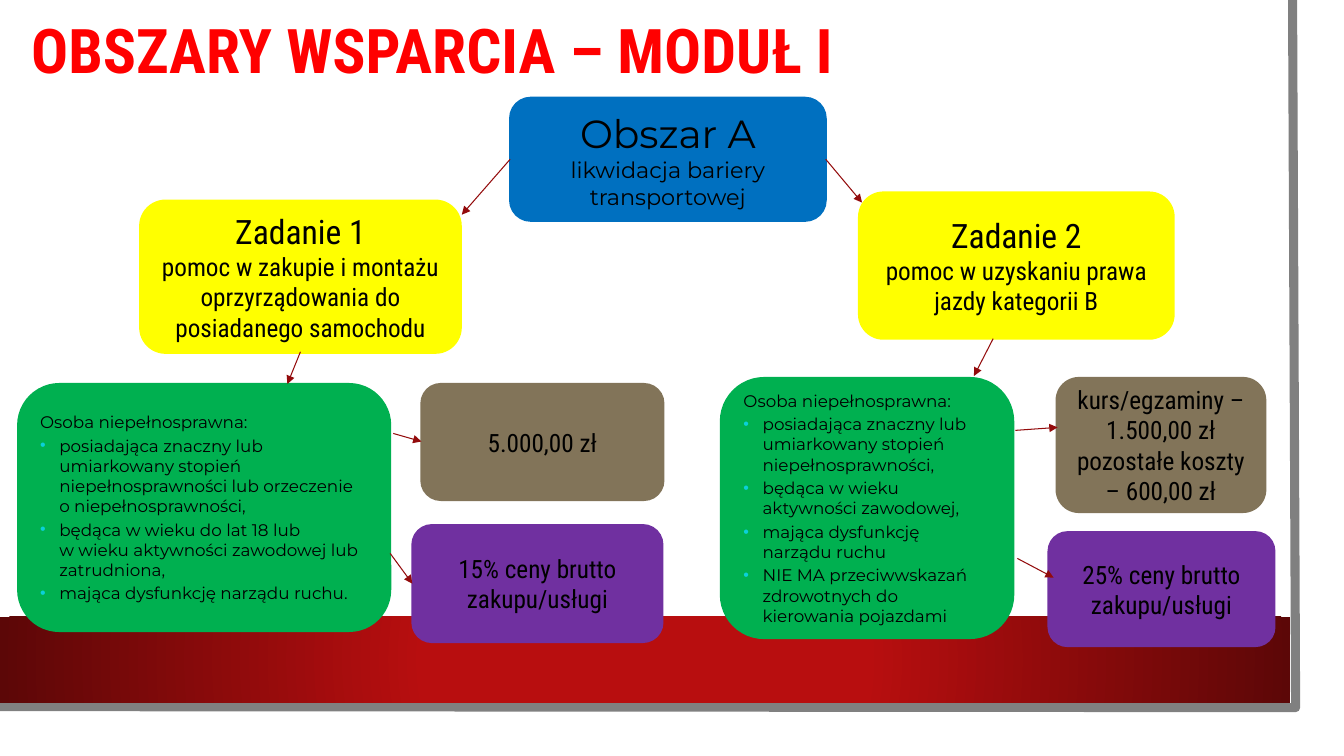
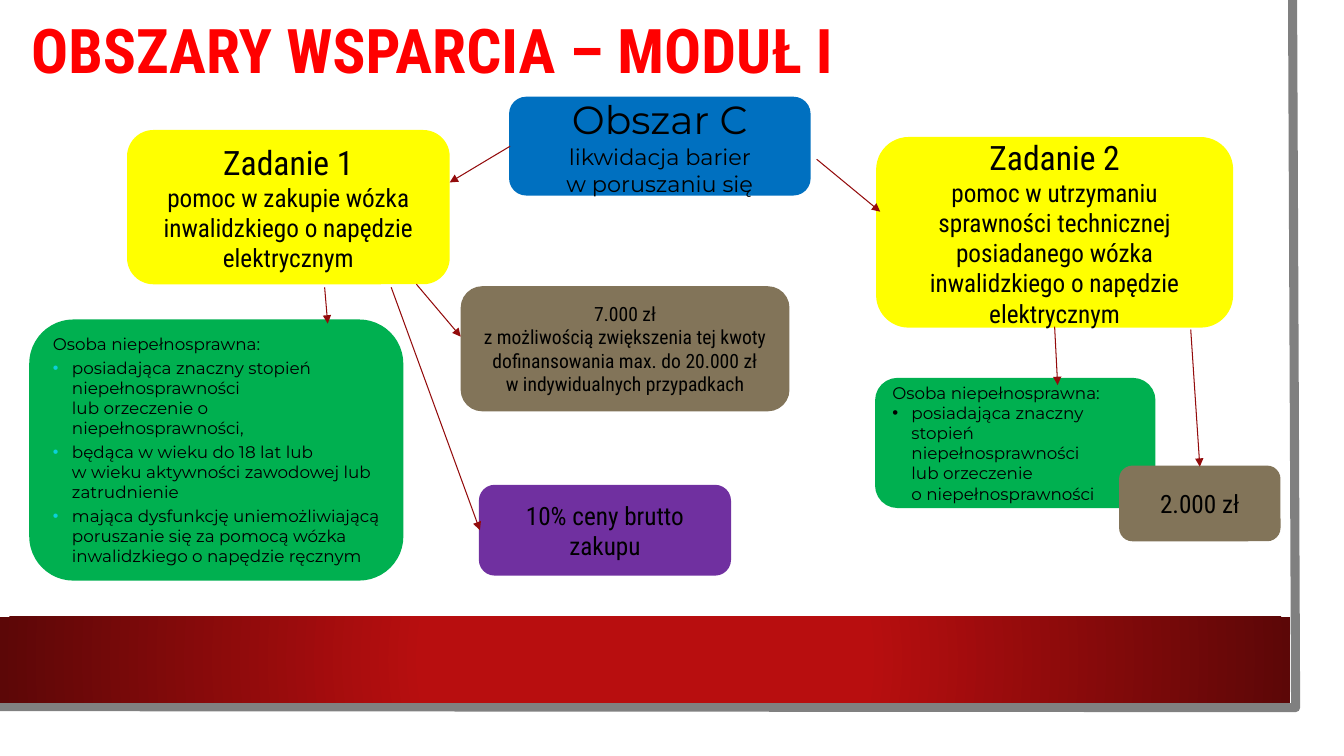
from dataclasses import dataclass, replace
from typing import Optional

from lxml import etree
from pptx import Presentation
from pptx.dml.color import RGBColor
from pptx.enum import shapes, text
from pptx.oxml import ns
from pptx.slide import Slide, SlideLayout
from pptx.util import Inches, Pt

BLACK = RGBColor(0x00, 0x00, 0x00)
RED = RGBColor(0xFF, 0x00, 0x00)
BLUE = RGBColor(0x00, 0x70, 0xC0)
YELLOW = RGBColor(0xFF, 0xFF, 0x00)
GREEN = RGBColor(0x00, 0xB0, 0x50)
BROWN = RGBColor(0x82, 0x74, 0x59)
PURPLE = RGBColor(0x70, 0x30, 0xA0)
CYAN = RGBColor(0x0B, 0xD0, 0xD9)
GREY = RGBColor(0x80, 0x80, 0x80)
BAND_CENTRE = RGBColor(0xB8, 0x0E, 0x0F)
BAND_EDGE = RGBColor(0x5C, 0x07, 0x07)
ARROW = RGBColor(0x93, 0x0B, 0x0C)

CONDENSED = "Roboto Condensed"
ROUND = "Montserrat"
TITLE = "OBSZARY WSPARCIA – MODUŁ I"
PERSON_HEADING = "Osoba niepełnosprawna:"


@dataclass(frozen=True)
class BoxStyle:
    fill: RGBColor
    font: str
    heading_size: float
    body_size: float
    bulleted: bool = False
    bullet_colour: Optional[RGBColor] = None
    space_before: float = 0


@dataclass(frozen=True)
class Box:
    style: BoxStyle
    left: float
    top: float
    width: float
    height: float
    lines: tuple[str, ...]


@dataclass(frozen=True)
class Arrow:
    x1: float
    y1: float
    x2: float
    y2: float


AREA = BoxStyle(BLUE, ROUND, 28, 16)
TASK = BoxStyle(YELLOW, CONDENSED, 24, 18)
PERSON = BoxStyle(GREEN, ROUND, 12, 12, True, CYAN, 2.4)
PLAIN_PERSON = replace(PERSON, bullet_colour=None, space_before=0)
AMOUNT = BoxStyle(BROWN, CONDENSED, 18, 18)
SMALL_AMOUNT = replace(AMOUNT, heading_size=14)
SHARE = replace(AMOUNT, fill=PURPLE)

AREA_A_BOXES = (
    Box(AREA, 5.06, 0.97, 3.13, 1.22, ("Obszar A", "likwidacja bariery transportowej")),
    Box(TASK, 1.39, 1.99, 3.18, 1.51, (
        "Zadanie 1",
        "pomoc w zakupie i montażu oprzyrządowania do posiadanego samochodu")),
    Box(TASK, 8.52, 1.91, 3.12, 1.45, (
        "Zadanie 2", "pomoc w uzyskaniu prawa jazdy kategorii B")),
    Box(PERSON, 0.18, 3.81, 3.69, 2.45, (
        PERSON_HEADING,
        "posiadająca znaczny lub umiarkowany stopień niepełnosprawności "
        "lub orzeczenie\vo niepełnosprawności,",
        "będąca w wieku do lat 18 lub\vw wieku aktywności zawodowej lub zatrudniona,",
        "mająca dysfunkcję narządu ruchu.")),
    Box(PERSON, 7.15, 3.75, 2.9, 2.58, (
        PERSON_HEADING,
        "posiadająca znaczny lub umiarkowany stopień niepełnosprawności,",
        "będąca w wieku aktywności zawodowej,",
        "mająca dysfunkcję narządu ruchu",
        "NIE MA przeciwwskazań zdrowotnych do kierowania pojazdami")),
    Box(AMOUNT, 4.18, 3.81, 2.4, 1.15, ("5.000,00 zł",)),
    Box(AMOUNT, 10.48, 3.75, 2.07, 1.33, (
        "kurs/egzaminy – 1.500,00 zł", "pozostałe koszty – 600,00 zł")),
    Box(SHARE, 4.09, 5.21, 2.48, 1.16, ("15% ceny brutto zakupu/usługi",)),
    Box(SHARE, 10.4, 5.28, 2.24, 1.13, ("25% ceny brutto zakupu/usługi",)),
)
AREA_A_ARROWS = (
    Arrow(5.06, 1.58, 4.58, 2.13),
    Arrow(8.19, 1.58, 8.55, 2.01),
    Arrow(2.98, 3.49, 2.85, 3.81),
    Arrow(3.9, 4.3, 4.18, 4.38),
    Arrow(3.87, 5.49, 4.09, 5.79),
    Arrow(9.85, 3.36, 9.66, 3.73),
    Arrow(10.07, 4.27, 10.49, 4.24),
    Arrow(10.09, 5.54, 10.45, 5.73),
)

AREA_C_BOXES = (
    Box(AREA, 5.06, 0.97, 2.97, 0.96, (
        "Obszar C", "likwidacja barier\vw poruszaniu się")),
    Box(TASK, 1.27, 1.3, 3.18, 1.51, (
        "Zadanie 1", "pomoc w zakupie wózka inwalidzkiego o napędzie elektrycznym")),
    Box(TASK, 8.7, 1.37, 3.52, 1.87, (
        "Zadanie 2",
        "pomoc w utrzymaniu sprawności technicznej posiadanego wózka "
        "inwalidzkiego o napędzie elektrycznym")),
    Box(PERSON, 0.3, 3.18, 3.69, 2.57, (
        PERSON_HEADING,
        "posiadająca znaczny stopień niepełnosprawności\v"
        "lub orzeczenie o niepełnosprawności,",
        "będąca w wieku do 18 lat lub\vw wieku aktywności zawodowej lub zatrudnienie",
        "mająca dysfunkcję uniemożliwiającą poruszanie się za pomocą wózka "
        "inwalidzkiego o napędzie ręcznym")),
    Box(SMALL_AMOUNT, 4.58, 2.85, 3.24, 1.22, (
        "7.000 zł\vz możliwością zwiększenia tej kwoty dofinansowania "
        "max. do 20.000 zł\vw indywidualnych przypadkach",)),
    Box(SHARE, 4.76, 4.82, 2.48, 0.88, ("10% ceny brutto zakupu",)),
    Box(PLAIN_PERSON, 8.69, 3.76, 2.76, 1.27, (
        PERSON_HEADING,
        "posiadająca znaczny stopień niepełnosprawności\v"
        "lub orzeczenie\vo niepełnosprawności")),
    Box(AMOUNT, 11.11, 4.63, 1.58, 0.73, ("2.000 zł",)),
)
AREA_C_ARROWS = (
    Arrow(5.06, 1.45, 4.46, 1.81),
    Arrow(8.1, 1.58, 8.73, 2.1),
    Arrow(3.22, 2.85, 3.25, 3.21),
    Arrow(10.46, 3.24, 10.49, 3.82),
    Arrow(11.81, 3.27, 11.9, 4.63),
    Arrow(4.13, 2.82, 4.57, 3.34),
    Arrow(3.88, 2.85, 4.76, 5.26),
)


def add_element(parent, tag: str, **attributes: str):
    return etree.SubElement(parent, ns.qn(tag), attributes)


def prepare_layout(layout: SlideLayout, slide: Slide) -> None:
    """Draw the frame and band on the slide, then move them behind the layout's title."""
    for holder in list(layout.placeholders):
        if holder.placeholder_format.type == shapes.PP_PLACEHOLDER.TITLE:
            holder.left, holder.top = Inches(0.21), 0
            holder.width, holder.height = Inches(11.37), Inches(1.07)
        else:
            layout.shapes.element.remove(holder.element)

    builder = slide.shapes.build_freeform(Inches(12.82), 0)
    corners = [(Inches(12.85), Inches(7.02)), (Inches(-0.03), Inches(7.01))]
    builder.add_line_segments(corners, close=False)
    frame = builder.convert_to_shape()
    frame.fill.background()
    frame.line.color.rgb = GREY
    frame.line.width = Pt(6.5)

    band = slide.shapes.add_shape(
        shapes.MSO_SHAPE.RECTANGLE, 0, Inches(6.12), Inches(12.8), Inches(0.85))
    band.line.fill.background()
    band.fill.gradient()
    stops = zip(band.fill.gradient_stops, (0.34, 1), (BAND_CENTRE, BAND_EDGE))
    for stop, position, colour in stops:
        stop.position = position
        stop.color.rgb = colour
    linear = band.element.find(".//" + ns.qn("a:lin"))
    gradient = linear.getparent()
    gradient.remove(linear)
    circle = add_element(gradient, "a:path", path="circle")
    add_element(circle, "a:fillToRect", l="50000", t="50000", r="50000", b="50000")

    for index, shape in enumerate((frame, band), start=2):
        shape.shadow.inherit = False
        layout.shapes.element.insert(index, shape.element)


def set_title(slide: Slide) -> None:
    frame = slide.shapes.title.text_frame
    frame.text = TITLE
    frame.vertical_anchor = text.MSO_ANCHOR.MIDDLE
    para = frame.paragraphs[0]
    para.alignment = text.PP_ALIGN.LEFT
    para.line_spacing = 0.9
    para.font.name = CONDENSED
    para.font.size = Pt(44)
    para.font.bold = True
    para.font.color.rgb = RED


def add_bullet(para, colour: Optional[RGBColor]) -> None:
    properties = para._p.get_or_add_pPr()
    indent = Inches(0.19)
    properties.set("marL", str(indent))
    properties.set("indent", str(-indent))
    if colour is not None:
        add_element(add_element(properties, "a:buClr"), "a:srgbClr", val=str(colour))
        add_element(properties, "a:buSzPct", val="95000")
    add_element(properties, "a:buFont", typeface="Arial")
    add_element(properties, "a:buChar", char="•")


def add_box(slide: Slide, box: Box) -> None:
    style = box.style
    shape = slide.shapes.add_shape(
        shapes.MSO_SHAPE.ROUNDED_RECTANGLE, Inches(box.left), Inches(box.top),
        Inches(box.width), Inches(box.height))
    shape.shadow.inherit = False
    shape.fill.solid()
    shape.fill.fore_color.rgb = style.fill
    shape.line.color.rgb = style.fill
    shape.line.width = Pt(1.5)
    frame = shape.text_frame
    frame.word_wrap = True
    frame.vertical_anchor = text.MSO_ANCHOR.MIDDLE
    for index, line in enumerate(box.lines):
        para = frame.add_paragraph() if index else frame.paragraphs[0]
        para.text = line
        para.alignment = text.PP_ALIGN.LEFT if style.bulleted else text.PP_ALIGN.CENTER
        if index and style.bulleted:
            para.space_before = Pt(style.space_before)
            add_bullet(para, style.bullet_colour)
        para.font.name = style.font
        para.font.size = Pt(style.body_size if index else style.heading_size)
        para.font.color.rgb = BLACK


def add_arrow(slide: Slide, arrow: Arrow) -> None:
    connector = slide.shapes.add_connector(
        shapes.MSO_CONNECTOR.STRAIGHT, Inches(arrow.x1), Inches(arrow.y1),
        Inches(arrow.x2), Inches(arrow.y2))
    connector.line.color.rgb = ARROW
    connector.line.width = Pt(0.75)
    add_element(connector.line._get_or_add_ln(), "a:tailEnd", type="triangle")
    add_element(connector.element.spPr, "a:effectLst")


def main() -> None:
    deck = Presentation()
    deck.slide_width, deck.slide_height = Inches(13.33), Inches(7.5)
    layout = deck.slide_layouts.get_by_name("Title Only")
    diagrams = ((AREA_A_BOXES, AREA_A_ARROWS), (AREA_C_BOXES, AREA_C_ARROWS))
    for number, (boxes, arrows) in enumerate(diagrams):
        slide = deck.slides.add_slide(layout)
        if number == 0:
            prepare_layout(layout, slide)
        set_title(slide)
        for box in boxes:
            add_box(slide, box)
        for arrow in arrows:
            add_arrow(slide, arrow)
    deck.save("out.pptx")


if __name__ == "__main__":
    main()
